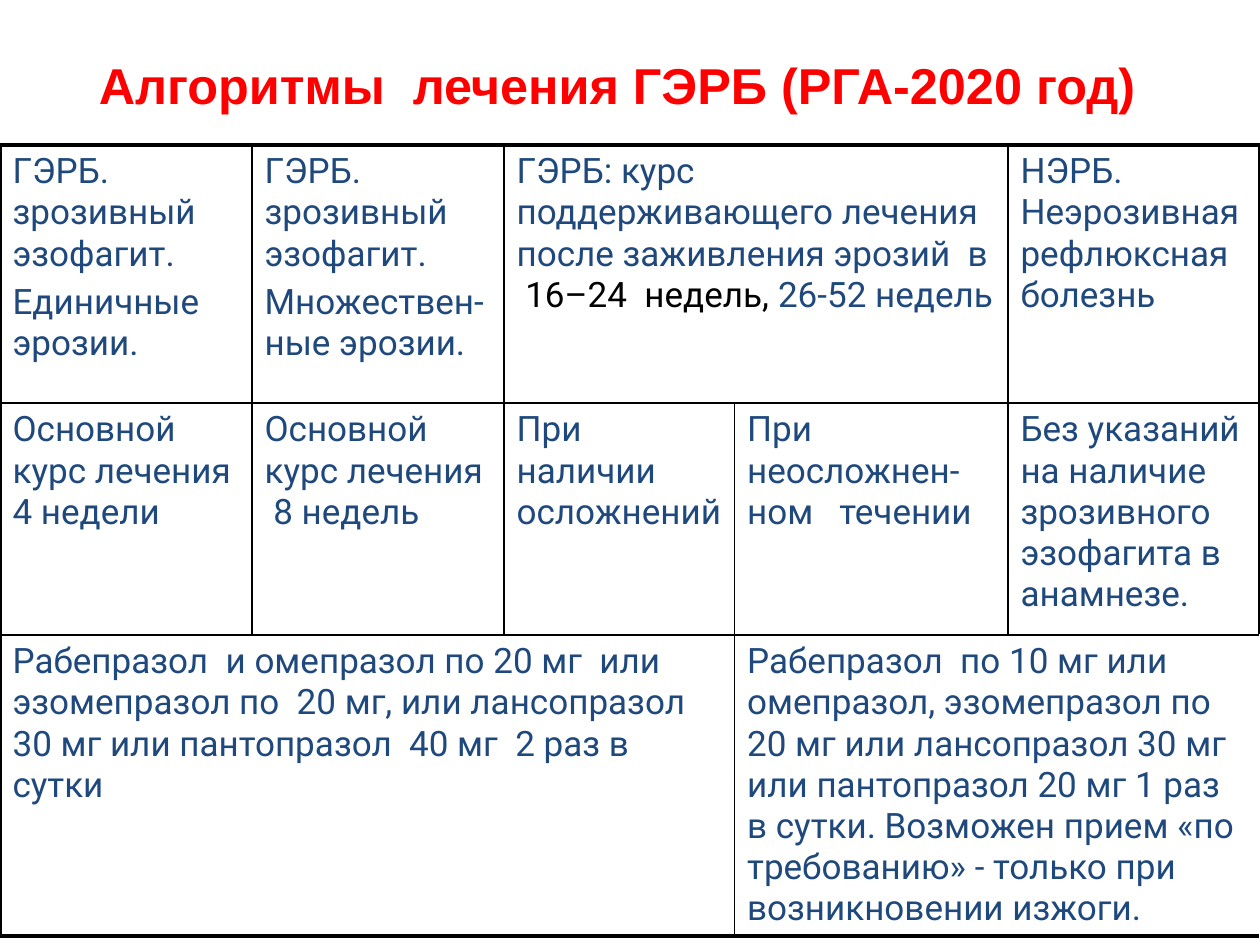
from dataclasses import dataclass

import pptx
from lxml import etree
from pptx.dml.color import RGBColor
from pptx.enum.text import MSO_ANCHOR, MSO_AUTO_SIZE, PP_ALIGN
from pptx.oxml.ns import qn
from pptx.util import Inches, Pt


@dataclass(frozen=True)
class Theme:
    title_font: str = "Arial"
    body_font: str = "Roboto"
    title_size: float = 28.8
    body_size: float = 20
    title_color: str = "FF0000"
    body_color: str = "1F497D"
    black: str = "000000"
    outer_line: float = 2.25
    inner_line: float = 1


THEME = Theme()
COLUMNS = [2, 2, 1.83, 2.17, 2]
ROWS = [2.05, 1.84, 2.38]

# Each cell: number of columns it covers, then its paragraphs.
# A paragraph is a string or a list of (text, color) spans.
CELLS = [
    [
        (1, ["ГЭРБ. зрозивный  эзофагит.", "Единичные эрозии."]),
        (1, ["ГЭРБ. зрозивный  эзофагит.", "Множествен-ные эрозии."]),
        (2, [[
            ("ГЭРБ: курс поддерживающего лечения после заживления эрозий  в  ", THEME.body_color),
            ("16–24  недель, ", THEME.black),
            ("26-52 недель", THEME.body_color),
        ]]),
        (1, ["НЭРБ. Неэрозивная рефлюксная болезнь"]),
    ],
    [
        (1, ["Основной курс лечения 4 недели"]),
        (1, ["Основной курс лечения  8 недель"]),
        (1, ["При наличии осложнений"]),
        (1, ["При неосложнен-ном   течении"]),
        (1, ["Без указаний на наличие зрозивного  эзофагита в анамнезе."]),
    ],
    [
        (3, ["Рабепразол  и омепразол по 20 мг  или эзомепразол по  20 мг, "
             "или лансопразол 30 мг или пантопразол  40 мг  2 раз в сутки"]),
        (2, ["Рабепразол  по 10 мг или омепразол, эзомепразол по 20 мг или "
             "лансопразол 30 мг или пантопразол 20 мг 1 раз в сутки. Возможен прием "
             "«по требованию» - только при возникновении изжоги."]),
    ],
]


def write_text(frame, paragraphs, *, font, size, color, bold=False,
               align=PP_ALIGN.LEFT, before=0):
    for index, content in enumerate(paragraphs):
        para = frame.paragraphs[0] if index == 0 else frame.add_paragraph()
        para.alignment = align
        para.space_before = Pt(before)
        spans = [(content, color)] if isinstance(content, str) else content
        for text, span_color in spans:
            span = para.add_run()
            span.text = text
            span.font.name = font
            span.font.size = Pt(size)
            span.font.bold = bold
            span.font.color.rgb = RGBColor.from_string(span_color)


def set_borders(cell, widths):
    """Draw the cell's borders; widths maps side letters, in L R T B order, to points."""
    properties = cell._tc.get_or_add_tcPr()
    for index, (side, width) in enumerate(widths.items()):
        line = etree.Element(qn(f"a:ln{side}"), w=str(Pt(width)))
        fill = etree.SubElement(line, qn("a:solidFill"))
        etree.SubElement(fill, qn("a:srgbClr"), val=THEME.black)
        properties.insert(index, line)


def border_widths(row, column, first, last):
    """Widths for one grid cell of a block that covers columns first to last."""
    def width(is_outer):
        return THEME.outer_line if is_outer else THEME.inner_line

    widths = {}
    if column == first:
        widths["L"] = width(column == 0)
    if column == last:
        widths["R"] = width(column == len(COLUMNS) - 1)
    widths["T"] = width(row == 0)
    widths["B"] = width(row == len(ROWS) - 1)
    return widths


def add_title(page, text):
    title = page.shapes.title
    title.left, title.top = Inches(0), Inches(0.42)
    title.width, title.height = Inches(9.8), Inches(0.5)
    frame = title.text_frame
    frame.word_wrap = True
    frame.auto_size = MSO_AUTO_SIZE.NONE
    frame.vertical_anchor = MSO_ANCHOR.MIDDLE
    write_text(frame, [text], font=THEME.title_font, size=THEME.title_size,
               color=THEME.title_color, bold=True, align=PP_ALIGN.CENTER)


def add_treatment_table(page):
    table = page.shapes.add_table(
        len(ROWS), len(COLUMNS), Inches(0), Inches(1.15),
        Inches(sum(COLUMNS)), Inches(sum(ROWS))).table
    table.first_row = False
    table.horz_banding = False
    for column, width in zip(table.columns, COLUMNS):
        column.width = Inches(width)
    for row, height in zip(table.rows, ROWS):
        row.height = Inches(height)

    for row, blocks in enumerate(CELLS):
        first = 0
        for span, paragraphs in blocks:
            last = first + span - 1
            for column in range(first, last + 1):
                cell = table.cell(row, column)
                cell.fill.background()
                set_borders(cell, border_widths(row, column, first, last))
            cell = table.cell(row, first)
            if span > 1:
                cell.merge(table.cell(row, last))
            write_text(cell.text_frame, paragraphs, font=THEME.body_font,
                       size=THEME.body_size, color=THEME.body_color, before=4)
            first = last + 1


def main():
    deck = pptx.Presentation()
    deck.slide_width, deck.slide_height = Inches(10), Inches(7.5)
    page = deck.slides.add_slide(deck.slide_layouts.get_by_name("Title Only"))
    add_title(page, "Алгоритмы  лечения ГЭРБ (РГА-2020 год)")
    add_treatment_table(page)
    deck.save("out.pptx")


if __name__ == "__main__":
    main()
